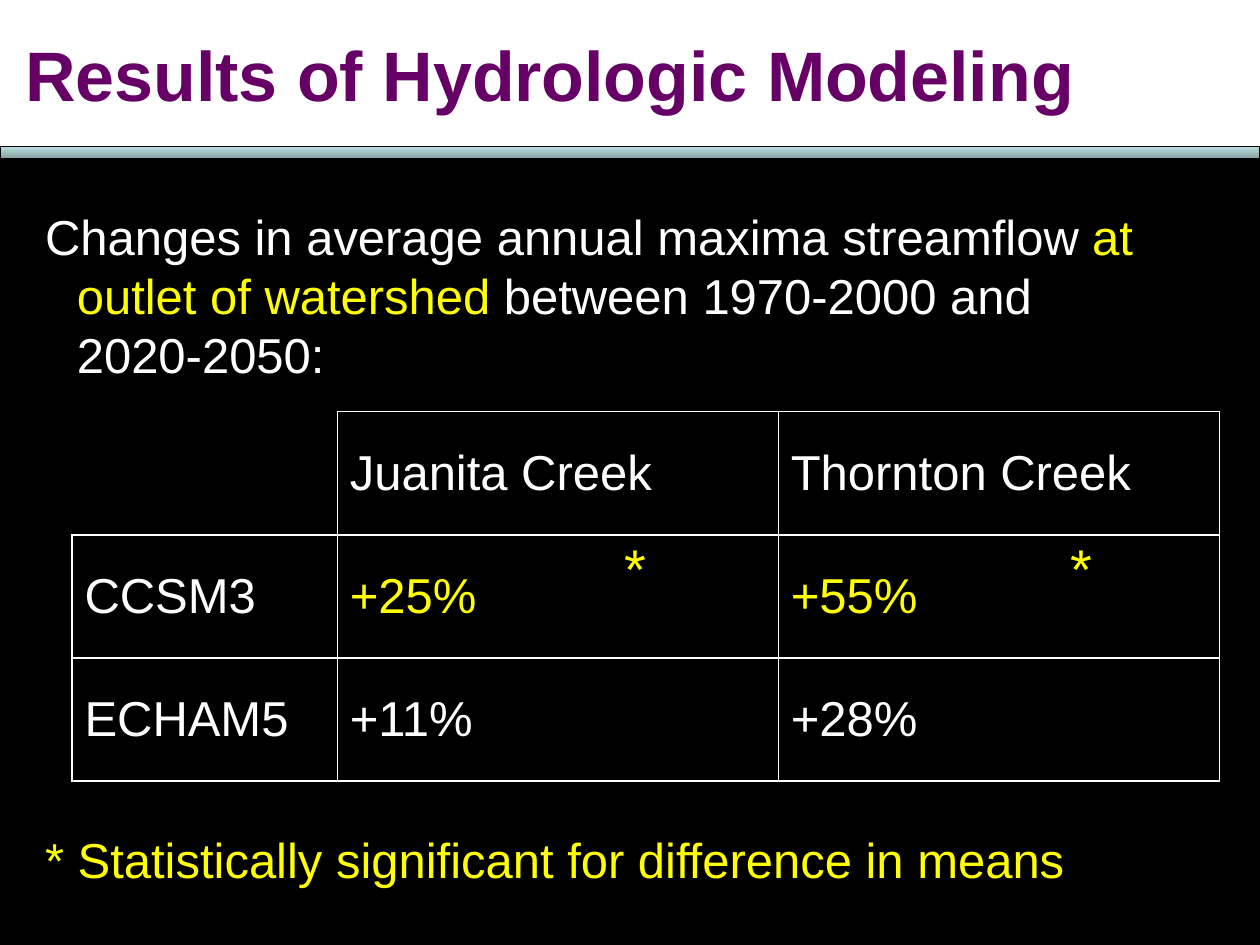
from typing import NamedTuple

from lxml.etree import SubElement
from pptx import Presentation
from pptx.dml.color import RGBColor
from pptx.enum.shapes import MSO_SHAPE
from pptx.enum.text import MSO_ANCHOR, MSO_AUTO_SIZE, PP_ALIGN
from pptx.oxml.ns import qn
from pptx.util import Cm, Pt

BLACK = RGBColor(0x00, 0x00, 0x00)
WHITE = RGBColor(0xFF, 0xFF, 0xFF)
YELLOW = RGBColor(0xFF, 0xFF, 0x00)
PURPLE = RGBColor(0x66, 0x00, 0x66)
BAR_TOP = RGBColor(0xBB, 0xE0, 0xE3)
BAR_BOTTOM = RGBColor(0x86, 0xA0, 0xA2)
FONT = "Arial"


class Run(NamedTuple):
    text: str
    color: RGBColor = WHITE


class Box(NamedTuple):
    left: float
    top: float
    width: float
    height: float
    runs: list[Run]
    size: int = 28
    indent: float = 0


STAR = [Run("*", YELLOW)]
BOXES = [
    Box(0.66, 4.04, 22.66, 3.73, [
        Run("Changes in average annual maxima streamflow "),
        Run("at outlet of watershed", YELLOW),
        Run(" between 1970-2000 and 2020-2050:"),
    ], indent=0.64),
    Box(0.66, 16.59, 22.86, 2.46, [
        Run("* Statistically significant for difference in means", YELLOW),
    ], indent=0.64),
    Box(21.34, 10.64, 1.24, 1.65, STAR, size=32),
    Box(12.34, 10.64, 1.24, 1.65, STAR, size=32),
]

CELLS = [
    [None, Run("Juanita Creek"), Run("Thornton Creek")],
    [Run("CCSM3"), Run("+25%", YELLOW), Run("+55%", YELLOW)],
    [Run("ECHAM5"), Run("+11%"), Run("+28%")],
]
COLUMN_WIDTHS = [5.35, 8.89, 8.89]
ROW_HEIGHT = 2.48


def add_text(p, text: str, *, size: int = 28, color: RGBColor = WHITE, bold: bool = False) -> None:
    r = p.add_run()
    r.text = text
    r.font.name = FONT
    r.font.size = Pt(size)
    r.font.bold = bold
    r.font.color.rgb = color


def format_title(sp) -> None:
    sp.left, sp.top, sp.width, sp.height = Cm(0), Cm(0), Cm(25.4), Cm(2.97)
    sp.fill.solid()
    sp.fill.fore_color.rgb = WHITE
    sp.line.color.rgb = WHITE
    sp.line.width = Pt(0.75)
    tf = sp.text_frame
    tf.auto_size = MSO_AUTO_SIZE.NONE
    tf.word_wrap = False
    tf.vertical_anchor = MSO_ANCHOR.MIDDLE
    tf.margin_left = Cm(0.51)
    tf.margin_top = tf.margin_right = tf.margin_bottom = Cm(0.25)
    p = tf.paragraphs[0]
    p.alignment = PP_ALIGN.LEFT
    add_text(p, "Results of Hydrologic Modeling", size=40, color=PURPLE, bold=True)


def add_bar(s) -> None:
    sp = s.shapes.add_shape(MSO_SHAPE.RECTANGLE, Cm(0), Cm(2.95), Cm(25.4), Cm(0.25))
    sp.shadow.inherit = False
    sp.fill.gradient()
    sp.fill.gradient_angle = 270
    for stop, color, position in zip(sp.fill.gradient_stops, (BAR_TOP, BAR_BOTTOM), (0, 1)):
        stop.color.rgb = color
        stop.position = position
    sp.line.color.rgb = BLACK
    sp.line.width = Pt(0.75)


def add_box(s, box: Box) -> None:
    sp = s.shapes.add_textbox(Cm(box.left), Cm(box.top), Cm(box.width), Cm(box.height))
    tf = sp.text_frame
    tf.word_wrap = True
    p = tf.paragraphs[0]
    if box.indent:
        pPr = p._p.get_or_add_pPr()
        pPr.set("marL", str(Cm(box.indent)))
        pPr.set("indent", str(-Cm(box.indent)))
    for run in box.runs:
        add_text(p, run.text, size=box.size, color=run.color)


def add_borders(cell, sides: str) -> None:
    tcPr = cell._tc.get_or_add_tcPr()
    for side in "LRTB":
        ln = SubElement(tcPr, qn(f"a:ln{side}"), w=str(Pt(1)))
        if side in sides:
            fill = SubElement(ln, qn("a:solidFill"))
            SubElement(fill, qn("a:srgbClr"), val=str(WHITE))
        else:
            SubElement(ln, qn("a:noFill"))


def add_results(s) -> None:
    frame = s.shapes.add_table(
        len(CELLS), len(COLUMN_WIDTHS), Cm(1.45), Cm(8.3),
        Cm(sum(COLUMN_WIDTHS)), Cm(ROW_HEIGHT * len(CELLS)),
    )
    table = frame.table
    table.first_row = table.horz_banding = False
    for column, width in zip(table.columns, COLUMN_WIDTHS):
        column.width = Cm(width)
    for i, runs in enumerate(CELLS):
        table.rows[i].height = Cm(ROW_HEIGHT)
        for j, run in enumerate(runs):
            cell = table.cell(i, j)
            cell.vertical_anchor = MSO_ANCHOR.MIDDLE
            add_borders(cell, "LRTB" if run else "RB")
            cell.fill.background()
            if run:
                add_text(cell.text_frame.paragraphs[0], run.text, color=run.color)


def main() -> None:
    prs = Presentation()
    prs.slide_width, prs.slide_height = Cm(25.4), Cm(19.05)
    s = prs.slides.add_slide(prs.slide_layouts[5])
    s.background.fill.solid()
    s.background.fill.fore_color.rgb = BLACK
    format_title(s.shapes.title)
    add_bar(s)
    add_results(s)
    for box in BOXES:
        add_box(s, box)
    prs.save("out.pptx")


if __name__ == "__main__":
    main()
